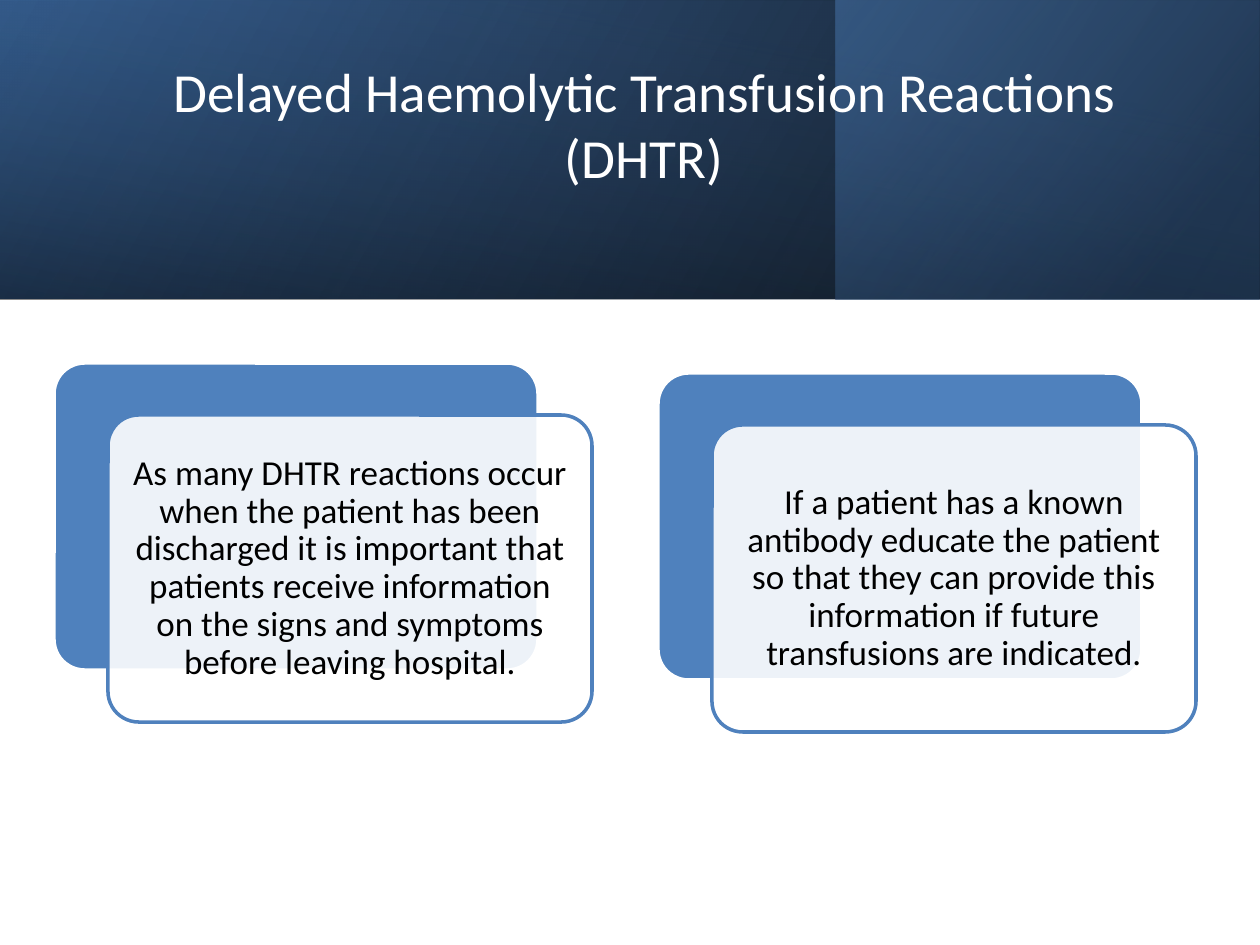
from copy import deepcopy

from lxml.etree import SubElement
from pptx import Presentation
from pptx.dml.color import RGBColor
from pptx.enum.shapes import MSO_SHAPE as SHAPE
from pptx.enum.text import MSO_ANCHOR as ANCHOR, MSO_AUTO_SIZE as AUTO, PP_ALIGN as ALIGN
from pptx.oxml.ns import qn
from pptx.util import Emu, Pt

EMU_PER_PX = 914400 / 126


def px(n):
    return Emu(round(n * EMU_PER_PX))


def rgb(value):
    return RGBColor.from_string(value)


class Deck:
    """Holds the style and the current slide."""
    font = "Calibri"
    blue, white, black = "4F81BD", "FFFFFF", "000000"

    def __init__(self, prs):
        self.slide = prs.slides.add_slide(prs.slide_layouts[5])

    def shape(self, kind, x, y, w, h):
        sp = self.slide.shapes.add_shape(kind, px(x), px(y), px(w), px(h))
        sp.shadow.inherit = False
        return sp

    def band(self, x, y, w, h, stops, angle, rotation=0):
        """Mirrored rectangle; stops are (percent, colour, opacity percent)."""
        sp = self.shape(SHAPE.RECTANGLE, x, y, w, h)
        sp.rotation = rotation
        sp.line.fill.background()
        spPr = sp._element.spPr
        spPr.find(qn("a:xfrm")).set("flipH", "1")
        sp.fill.background()
        old = spPr.find(qn("a:noFill"))
        grad = SubElement(spPr, qn("a:gradFill"), rotWithShape="1")
        spPr.replace(old, grad)
        stop_list = SubElement(grad, qn("a:gsLst"))
        for pos, colour, opacity in stops:
            gs = SubElement(stop_list, qn("a:gs"), pos=str(pos * 1000))
            clr = SubElement(gs, qn("a:srgbClr"), val=colour)
            SubElement(clr, qn("a:alpha"), val=str(opacity * 1000))
        SubElement(grad, qn("a:lin"), ang=str(angle * 60000), scaled="0")

    def panel(self, x, y, w, h, fill, line, opacity=100):
        sp = self.shape(SHAPE.ROUNDED_RECTANGLE, x, y, w, h)
        sp.adjustments[0] = 0.1
        sp.fill.solid()
        sp.fill.fore_color.rgb = rgb(fill)
        if opacity < 100:
            clr = sp._element.spPr.find(qn("a:solidFill"))[0]
            SubElement(clr, qn("a:alpha"), val=str(opacity * 1000))
        sp.line.color.rgb = rgb(line)
        sp.line.width = Pt(2)

    def add_text(self, tf, text, size, colour):
        tf.word_wrap = True
        tf.auto_size = AUTO.NONE
        tf.vertical_anchor = ANCHOR.MIDDLE
        p = tf.paragraphs[0]
        p.alignment = ALIGN.CENTER
        r = p.add_run()
        r.text = text
        r.font.name, r.font.size = self.font, Pt(size)
        r.font.color.rgb = rgb(colour)
        return p, r

    def title(self, x, y, w, h, text):
        sp = self.slide.shapes.title
        sp.left, sp.top, sp.width, sp.height = px(x), px(y), px(w), px(h)
        p, r = self.add_text(sp.text_frame, text, 31.5, self.white)
        # The closing line break keeps the size of the title
        p.add_line_break()
        rPr = r._r.rPr
        p._p[-1].append(deepcopy(rPr))
        SubElement(p._p, qn("a:endParaRPr"), sz=rPr.get("sz"))
        # Bring the title in front of the bands
        self.slide.shapes._spTree.append(sp._element)

    def text(self, x, y, w, h, text):
        tf = self.slide.shapes.add_textbox(px(x), px(y), px(w), px(h)).text_frame
        tf.margin_left = tf.margin_right = tf.margin_top = tf.margin_bottom = px(10)
        p, _ = self.add_text(tf, text, 20, self.black)
        p.line_spacing = 0.9

    def card(self, x, y, text):
        w, h, shift, inset = 484, 307, (54, 52), 9
        self.panel(x, y, w, h, self.blue, self.white)
        x, y = x + shift[0], y + shift[1]
        self.panel(x, y, w, h, self.white, self.blue, opacity=90)
        self.text(x + inset, y + inset, w - 2 * inset, h - 2 * inset, text)


def main():
    prs = Presentation()
    prs.slide_width, prs.slide_height = px(1260), px(945)
    s = Deck(prs)

    # Header bands
    s.band(0, 0, 1260, 299, [(0, "000000", 96), (100, "376092", 100)], 330)
    s.band(836, 0, 423, 299, [(19, "254061", 68), (100, "4F81BD", 48)], 320)
    s.band(480, -480, 299, 1260, [(23, "376092", 16), (99, "000000", 45)], 350, rotation=270)

    # Title
    s.title(142, 48, 1004, 217, "Delayed Haemolytic Transfusion Reactions (DHTR)")

    # Cards
    s.card(54, 363, "As many DHTR reactions occur when the patient has been discharged "
                    "it is important that patients receive information on the signs "
                    "and symptoms before leaving hospital.")
    s.card(658, 373, "If a patient has a known antibody educate the patient so that "
                     "they can provide this information if future transfusions are "
                     "indicated.")

    prs.save("out.pptx")


if __name__ == "__main__":
    main()
